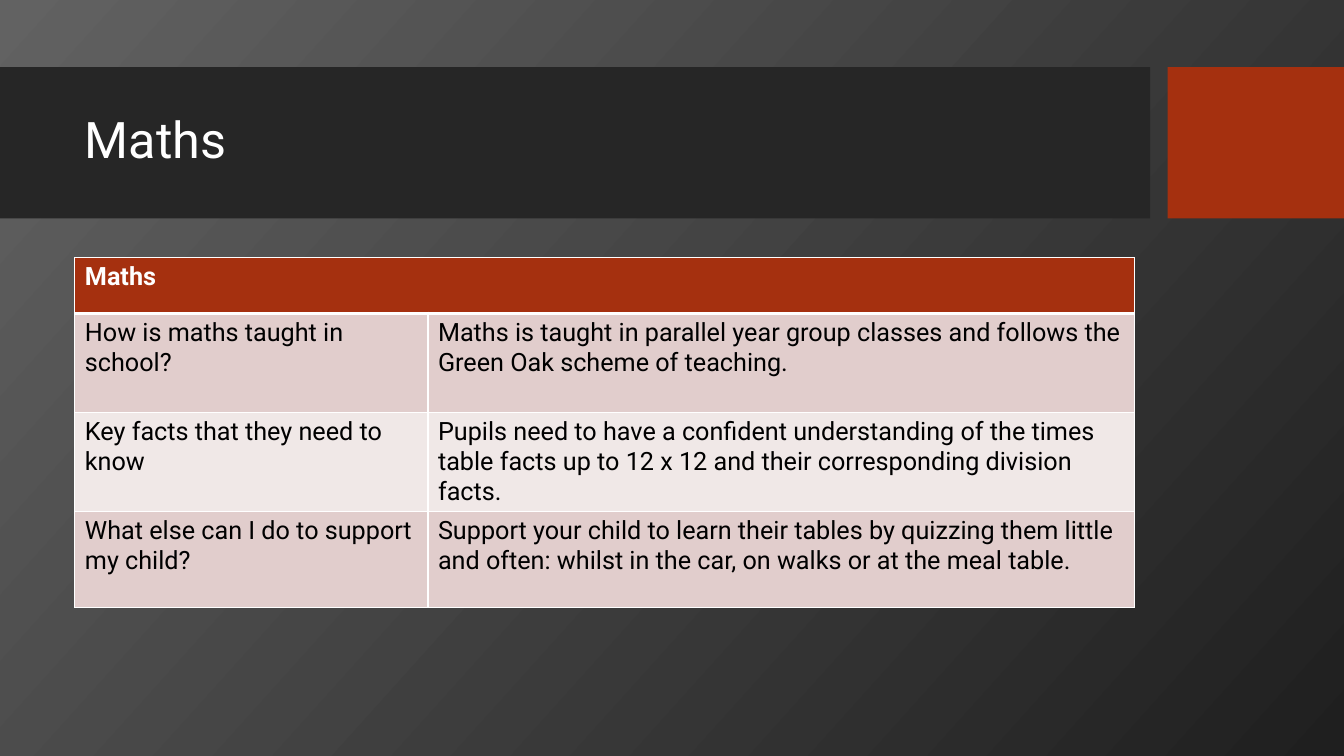
from lxml import etree
from pptx import Presentation
from pptx import util as u
from pptx.dml.color import RGBColor
from pptx.enum import shapes, text
from pptx.oxml.ns import qn

HEADING = "Maths"
ANSWERS = [
    ("How is maths taught in school?",
     "Maths is taught in parallel year group classes and follows the Green Oak scheme of teaching."),
    ("Key facts that they need to know",
     "Pupils need to have a confident understanding of the times table facts up to 12 x 12 "
     "and their corresponding division facts."),
    ("What else can I do to support my child?",
     "Support your child to learn their tables by quizzing them little and often: "
     "whilst in the car, on walks or at the meal table."),
]
THEME = {
    "font": "Roboto", "title_size": 36, "table_size": 18,
    "white": "FFFFFF", "black": "000000", "band": "262626", "accent": "A5300F",
    "rows": ("E1CDCC", "F0E8E7"), "backdrop": ("626262", "1F1F1F"),
}
SLIDE = (960, 540)
BAND_TOP, BAND_HEIGHT, BAND_WIDTH, ACCENT_LEFT = 48, 108, 821.5, 834
TITLE_BOX = (53.5, 59, 756.7, 85)
TABLE_LEFT, TABLE_TOP = 53.5, 184
COLUMNS = (252.2, 504.5)
ROWS = (40, 70.7, 70.7, 68.7)


def rgb(value):
    return RGBColor.from_string(value)


def style_font(paragraph, size, color, bold=False):
    values = {"name": THEME["font"], "size": u.Pt(size), "bold": bold}
    for key, value in values.items():
        setattr(paragraph.font, key, value)
    paragraph.font.color.rgb = rgb(color)


def add_block(slide, left, width, color):
    block = slide.shapes.add_shape(
        shapes.MSO_SHAPE.RECTANGLE,
        u.Pt(left), u.Pt(BAND_TOP), u.Pt(width), u.Pt(BAND_HEIGHT))
    block.shadow.inherit = False
    block.fill.solid()
    block.fill.fore_color.rgb = rgb(color)
    block.line.fill.background()


def add_borders(cell, top, bottom):
    properties = cell._tc.get_or_add_tcPr()
    for side, width in {"L": 1, "R": 1, "T": top, "B": bottom}.items():
        line = etree.SubElement(properties, qn(f"a:ln{side}"), w=str(u.Pt(width)))
        fill = etree.SubElement(line, qn("a:solidFill"))
        etree.SubElement(fill, qn("a:srgbClr"), val=THEME["white"])


def add_title(slide):
    title = slide.shapes.title
    for key, value in zip(("left", "top", "width", "height"), TITLE_BOX):
        setattr(title, key, u.Pt(value))
    title.text_frame.text = HEADING
    title.text_frame.vertical_anchor = text.MSO_ANCHOR.MIDDLE
    heading = title.text_frame.paragraphs[0]
    heading.alignment = text.PP_ALIGN.LEFT
    heading.line_spacing = 0.9
    style_font(heading, THEME["title_size"], THEME["white"])
    slide.shapes._spTree.append(title._element)


def add_answers(slide):
    grid = [(HEADING, "")] + ANSWERS
    table = slide.shapes.add_table(
        len(grid), len(COLUMNS), u.Pt(TABLE_LEFT), u.Pt(TABLE_TOP),
        u.Pt(sum(COLUMNS)), u.Pt(sum(ROWS))).table
    for column, width in zip(table.columns, COLUMNS):
        column.width = u.Pt(width)
    for row, height in zip(table.rows, ROWS):
        row.height = u.Pt(height)
    table.cell(0, 0).merge(table.cell(0, 1))
    for r, entries in enumerate(grid):
        header = r == 0
        fill = THEME["accent"] if header else THEME["rows"][(r - 1) % 2]
        ink = THEME["white"] if header else THEME["black"]
        for c, entry in enumerate(entries):
            cell = table.cell(r, c)
            add_borders(cell, 3 if r == 1 else 1, 3 if header else 1)
            cell.fill.solid()
            cell.fill.fore_color.rgb = rgb(fill)
            if entry:
                cell.text = entry
                style_font(cell.text_frame.paragraphs[0], THEME["table_size"], ink, header)


def main():
    """Build the maths information slide."""
    deck = Presentation()
    deck.slide_width, deck.slide_height = map(u.Pt, SLIDE)
    slide = deck.slides.add_slide(deck.slide_layouts[5])
    backdrop = slide.background.fill
    backdrop.gradient()
    backdrop.gradient_angle = 318
    for stop, color in zip(backdrop.gradient_stops, THEME["backdrop"]):
        stop.color.rgb = rgb(color)
    add_block(slide, 0, BAND_WIDTH, THEME["band"])
    add_block(slide, ACCENT_LEFT, SLIDE[0] - ACCENT_LEFT, THEME["accent"])
    add_title(slide)
    add_answers(slide)
    deck.save("out.pptx")


if __name__ == "__main__":
    main()
